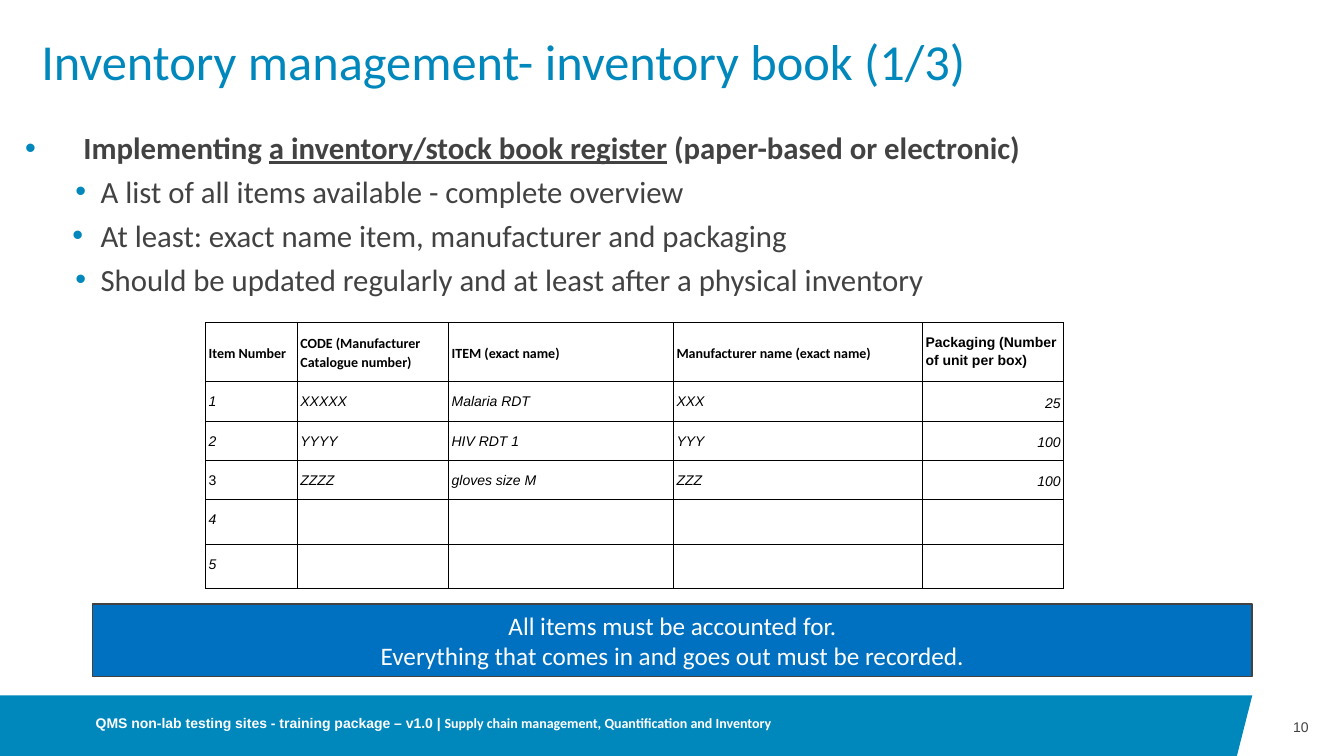
from lxml.etree import SubElement
from pptx import Presentation
from pptx.dml.color import RGBColor
from pptx.enum.shapes import MSO_SHAPE as Shape
from pptx.enum.text import MSO_ANCHOR as Anchor, MSO_AUTO_SIZE as AutoSize, PP_ALIGN as Align
from pptx.oxml import parse_xml
from pptx.oxml.ns import nsdecls, qn
from pptx.util import Inches, Pt

BLUE, BANNER_BLUE, GREY, WHITE, BLACK = "0087BC", "0070C0", "424242", "FFFFFF", "000000"

BULLETS = [
    (0, 0.58, -0.58, [("Implementing ", {"bold": True}),
                      ("a inventory/stock book register", {"bold": True, "underline": True}),
                      (" (paper-based or electronic)", {"bold": True})]),
    (1, 0.75, -0.25, [("A list of all items available - complete overview", {})]),
    (1, 0.75, -0.28, [("At least: exact name item, manufacturer and packaging", {})]),
    (1, 0.75, -0.25, [("Should be updated regularly and at least after a physical inventory", {})]),
]
HEADERS = ["Item Number", "CODE (Manufacturer Catalogue number)", "ITEM (exact name)",
           "Manufacturer name (exact name)", "Packaging (Number of unit per box)"]
ITEMS = [
    ["1", "XXXXX", "Malaria RDT", "XXX", "25"],
    ["2", "YYYY", "HIV RDT 1", "YYY", "100"],
    ["3", "ZZZZ", "gloves size M", "ZZZ", "100"],
    ["4", "", "", "", ""],
    ["5", "", "", "", ""],
]
COLUMN_WIDTHS = [0.91, 1.5, 2.23, 2.47, 1.4]
ROW_HEIGHTS = [0.58, 0.39, 0.39, 0.39, 0.44, 0.44]


def rgb(hex_colour):
    """Turn a hex string into a colour."""
    return RGBColor.from_string(hex_colour)


def set_values(target, values):
    """Set each named attribute of the target."""
    for name, value in values.items():
        setattr(target, name, value)


def set_margins(target, left, top, right, bottom):
    """Set the four inner margins in inches."""
    for side, value in zip(("left", "top", "right", "bottom"), (left, top, right, bottom)):
        setattr(target, f"margin_{side}", Inches(value))


def add_span(para, text, size, colour, font="Calibri", **values):
    """Add one formatted run to a paragraph."""
    span = para.add_run()
    span.text = text
    set_values(span.font, {"size": Pt(size), "name": font, **values})
    span.font.color.rgb = rgb(colour)


def set_frame(frame, anchor, margins):
    """Set the wrapping, anchor and margins of a text frame."""
    set_values(frame, {"word_wrap": True, "auto_size": AutoSize.NONE, "vertical_anchor": anchor})
    set_margins(frame, *margins)


def add_text_box(slide, left, top, width, height, anchor=Anchor.MIDDLE, margins=(0, 0, 0, 0)):
    """Add an empty text box and return its frame."""
    box = slide.shapes.add_textbox(Inches(left), Inches(top), Inches(width), Inches(height))
    set_frame(box.text_frame, anchor, margins)
    return box.text_frame


def add_footer_band(slide):
    """Draw the slanted band at the foot of the slide."""
    corners = [(Inches(x), Inches(y)) for x, y in ((0, 6.9), (12.42, 6.9), (12.26, 7.53), (0, 7.53))]
    builder = slide.shapes.build_freeform(*corners[0])
    builder.add_line_segments(corners[1:], close=True)
    band = builder.convert_to_shape()
    band.shadow.inherit = False
    band.fill.solid()
    band.fill.fore_color.rgb = rgb(BLUE)
    band.line.fill.background()


def format_title(slide, text):
    """Place and fill the title placeholder."""
    title = slide.shapes.title
    set_values(title, {"left": Inches(0.41), "top": Inches(0.13),
                       "width": Inches(11.5), "height": Inches(1.02)})
    set_frame(title.text_frame, Anchor.MIDDLE, (0, 0, 0, 0))
    para = title.text_frame.paragraphs[0]
    set_values(para, {"alignment": Align.LEFT, "line_spacing": 0.9})
    add_span(para, text, 36, BLUE)


def set_bullet(para, left, indent):
    """Give a paragraph a round blue bullet with a hanging indent."""
    props = para._p.get_or_add_pPr()
    props.set("marL", str(Inches(left)))
    props.set("indent", str(Inches(indent)))
    SubElement(SubElement(props, qn("a:buClr")), qn("a:srgbClr"), val=BLUE)
    SubElement(props, qn("a:buFont"), typeface="Arial")
    SubElement(props, qn("a:buChar"), char="•")


def add_bullets(slide):
    """Add the bulleted list."""
    frame = add_text_box(slide, 0.15, 1.23, 11.83, 1.85, Anchor.TOP, (0.1, 0.05, 0.1, 0.05))
    for index, (level, left, indent, spans) in enumerate(BULLETS):
        para = frame.add_paragraph() if index else frame.paragraphs[0]
        set_values(para, {"level": level, "space_before": Pt(5 * level)})
        set_bullet(para, left, indent)
        for text, values in spans:
            add_span(para, text, 22, GREY, **values)


def set_borders(cell):
    """Draw a thin black line on each side of a cell."""
    props = cell._tc.get_or_add_tcPr()
    for index, side in enumerate(("lnL", "lnR", "lnT", "lnB")):
        props.insert(index, parse_xml(
            f'<a:{side} {nsdecls("a")} w="{Pt(0.75)}"><a:solidFill>'
            f'<a:srgbClr val="{BLACK}"/></a:solidFill></a:{side}>'))


def fill_cell(cell, text, row, column):
    """Write and format one cell of the inventory book."""
    header, packaging = row == 0, column == len(HEADERS) - 1
    cell.fill.background()
    set_borders(cell)
    if not text:
        return
    set_margins(cell, 0.03, 0.1, 0.03, 0.1)
    para = cell.text_frame.paragraphs[0]
    para.line_spacing = 1.15
    if header and not packaging:
        cell.vertical_anchor = Anchor.MIDDLE
    elif packaging and not header:
        cell.vertical_anchor = Anchor.BOTTOM
        para.alignment = Align.RIGHT
    add_span(para, text, 10, BLACK, "Calibri" if header and not packaging else "Arial",
             bold=header, italic=not header and text != "3")


def add_inventory_table(slide):
    """Add the sample inventory book."""
    rows = [HEADERS, *ITEMS]
    table = slide.shapes.add_table(len(rows), len(HEADERS), Inches(2.04), Inches(3.2),
                                   Inches(sum(COLUMN_WIDTHS)), Inches(sum(ROW_HEIGHTS))).table
    set_values(table, {"first_row": False, "horz_banding": False})
    for column, width in zip(table.columns, COLUMN_WIDTHS):
        column.width = Inches(width)
    for row, height in zip(table.rows, ROW_HEIGHTS):
        row.height = Inches(height)
    for row, texts in enumerate(rows):
        for column, text in enumerate(texts):
            fill_cell(table.cell(row, column), text, row, column)


def add_banner(slide, lines):
    """Add the blue message box."""
    box = slide.shapes.add_shape(Shape.RECTANGLE, Inches(0.92), Inches(5.99), Inches(11.5), Inches(0.72))
    box.shadow.inherit = False
    box.fill.solid()
    box.fill.fore_color.rgb = rgb(BANNER_BLUE)
    box.line.color.rgb = rgb(GREY)
    box.line.width = Pt(1)
    frame = box.text_frame
    set_frame(frame, Anchor.MIDDLE, (0.06, 0.06, 0.06, 0.06))
    for index, line in enumerate(lines):
        para = frame.add_paragraph() if index else frame.paragraphs[0]
        para.alignment = Align.CENTER
        add_span(para, line, 18, WHITE)


def add_footer(slide):
    """Add the footer text and the page number."""
    para = add_text_box(slide, 0.95, 6.9, 8, 0.55).paragraphs[0]
    add_span(para, "QMS non-lab testing sites - training package – v1.0 | ", 10, WHITE, "Arial", bold=True)
    add_span(para, "Supply chain management, Quantification and Inventory", 10, WHITE, bold=True)
    number = add_text_box(slide, 12.42, 6.9, 0.56, 0.63).paragraphs[0]
    number.alignment = Align.RIGHT
    add_span(number, "10", 10, GREY, "Arial")


def main():
    """Build and save the slide."""
    deck = Presentation()
    set_values(deck, {"slide_width": Inches(13.33), "slide_height": Inches(7.5)})
    page = deck.slides.add_slide(deck.slide_layouts[5])
    add_footer_band(page)
    format_title(page, "Inventory management- inventory book (1/3)")
    add_bullets(page)
    add_banner(page, ["All items must be accounted for.",
                      "Everything that comes in and goes out must be recorded."])
    add_footer(page)
    add_inventory_table(page)
    deck.save("out.pptx")


if __name__ == "__main__":
    main()
